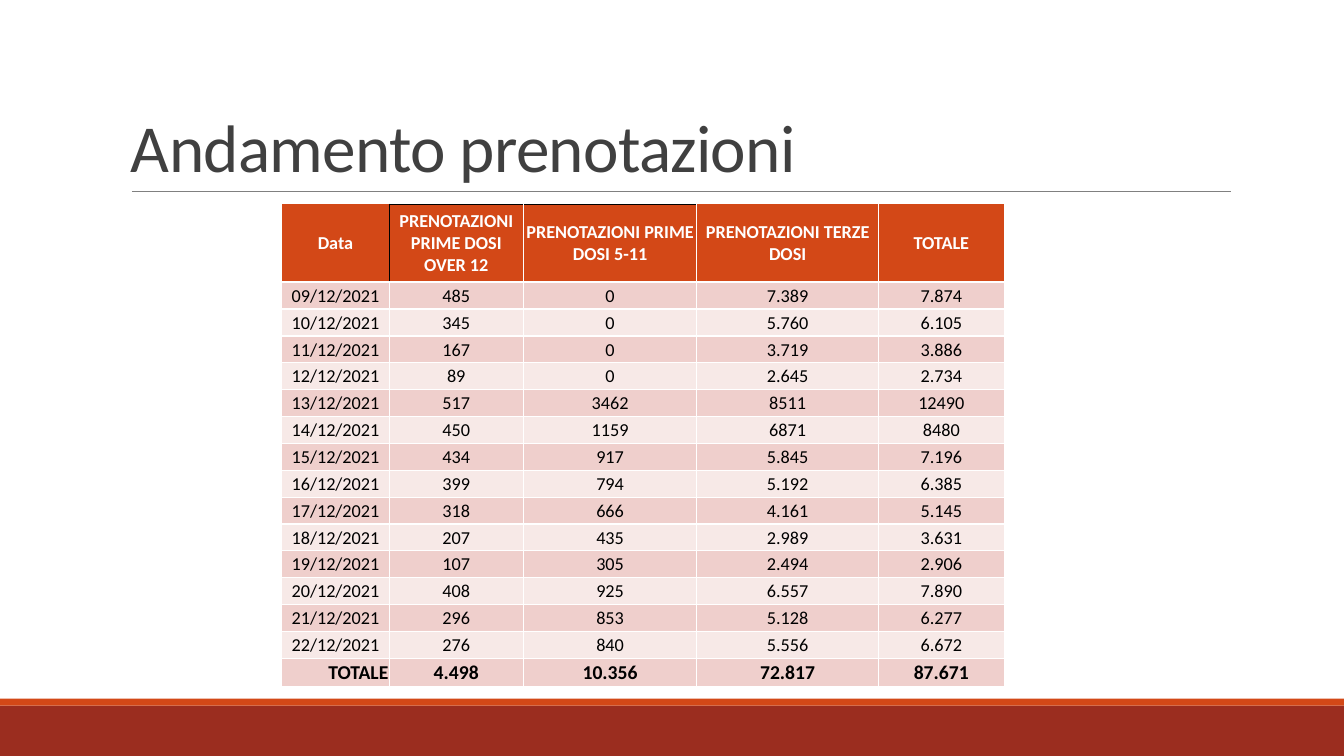
from pptx import Presentation
from pptx.dml.color import RGBColor
from pptx.enum.shapes import MSO_CONNECTOR, MSO_SHAPE
from pptx.enum.text import MSO_ANCHOR, PP_ALIGN
from pptx.oxml.ns import qn
from pptx.util import Pt
from lxml.etree import SubElement


def rgb(color):
    return RGBColor.from_string(color)


def add_border(cell, side, color, width):
    """Draw one side (L, R, T or B) of a cell; call it before filling the cell."""
    ln = SubElement(cell._tc.get_or_add_tcPr(), qn(f"a:ln{side}"), w=str(Pt(width)))
    fill = SubElement(ln, qn("a:solidFill"))
    SubElement(fill, qn("a:srgbClr"), val=color)


prs = Presentation()
prs.slide_width, prs.slide_height = Pt(960), Pt(540)
s = prs.slides.add_slide(prs.slide_layouts[6])

# Footer bands
for top, height, color in [(504, 36, "9B2D1F"), (499, 5, "D34817")]:
    sp = s.shapes.add_shape(MSO_SHAPE.RECTANGLE, 0, Pt(top), Pt(960), Pt(height))
    sp.shadow.inherit = False
    sp.fill.solid()
    sp.fill.fore_color.rgb = rgb(color)
    sp.line.fill.background()

# Title and rule
rule = s.shapes.add_connector(MSO_CONNECTOR.STRAIGHT, Pt(94.3), Pt(136.8), Pt(879), Pt(136.8))
rule.line.color.rgb = rgb("808080")
rule.line.width = Pt(0.5)
SubElement(rule._element.spPr, qn("a:effectLst"))

tf = s.shapes.add_textbox(Pt(86.4), Pt(22.6), Pt(792), Pt(114.2)).text_frame
tf.word_wrap = True
tf.vertical_anchor = MSO_ANCHOR.BOTTOM
p = tf.paragraphs[0]
p.line_spacing = 0.85
r = p.add_run()
r.text = "Andamento prenotazioni"
r.font.name, r.font.size = "Calibri", Pt(48)
r.font.color.rgb = rgb("404040")
r.font._element.set("spc", "-50")

# Bookings table
rows = [
    ("Data", "PRENOTAZIONI PRIME DOSI OVER 12", "PRENOTAZIONI PRIME DOSI 5-11",
     "PRENOTAZIONI TERZE DOSI", "TOTALE"),
    ("09/12/2021", "485", "0", "7.389", "7.874"),
    ("10/12/2021", "345", "0", "5.760", "6.105"),
    ("11/12/2021", "167", "0", "3.719", "3.886"),
    ("12/12/2021", "89", "0", "2.645", "2.734"),
    ("13/12/2021", "517", "3462", "8511", "12490"),
    ("14/12/2021", "450", "1159", "6871", "8480"),
    ("15/12/2021", "434", "917", "5.845", "7.196"),
    ("16/12/2021", "399", "794", "5.192", "6.385"),
    ("17/12/2021", "318", "666", "4.161", "5.145"),
    ("18/12/2021", "207", "435", "2.989", "3.631"),
    ("19/12/2021", "107", "305", "2.494", "2.906"),
    ("20/12/2021", "408", "925", "6.557", "7.890"),
    ("21/12/2021", "296", "853", "5.128", "6.277"),
    ("22/12/2021", "276", "840", "5.556", "6.672"),
    ("TOTALE", "4.498", "10.356", "72.817", "87.671"),
]
col_widths = [76.8, 95.8, 124, 129.6, 90]
last = len(rows) - 1
row_heights = [56] + [19.2] * (last - 1) + [20]
black_sides = {(0, "R"), (1, "L"), (1, "T"), (2, "T")}  # header: (column, side)

table = s.shapes.add_table(len(rows), len(col_widths), Pt(201.2), Pt(145.6),
                           Pt(sum(col_widths)), Pt(sum(row_heights))).table
for column, width in zip(table.columns, col_widths):
    column.width = Pt(width)

for i, values in enumerate(rows):
    table.rows[i].height = Pt(row_heights[i])
    for j, value in enumerate(values):
        cell = table.cell(i, j)
        cell.vertical_anchor = MSO_ANCHOR.MIDDLE
        cell.margin_left = cell.margin_right = cell.margin_top = Pt(0.6)
        cell.margin_bottom = 0
        for side in "LRTB":
            if i == 0 and (j, side) in black_sides:
                add_border(cell, side, "000000", 0.5)
            else:
                below_header = (i, side) in [(0, "B"), (1, "T")]
                add_border(cell, side, "FFFFFF", 1.5 if below_header else 1)
        cell.fill.solid()
        cell.fill.fore_color.rgb = rgb("D34817" if i == 0 else "EFCFCC" if i % 2 else "F7E9E7")
        p = cell.text_frame.paragraphs[0]
        p.alignment = PP_ALIGN.RIGHT if (i, j) == (last, 0) else PP_ALIGN.CENTER
        r = p.add_run()
        r.text = value
        r.font.name, r.font.size = "Calibri", Pt(14 if i == last else 13)
        r.font.bold = i in (0, last)
        r.font.color.rgb = rgb("FFFFFF" if i == 0 else "000000")

prs.save("out.pptx")
